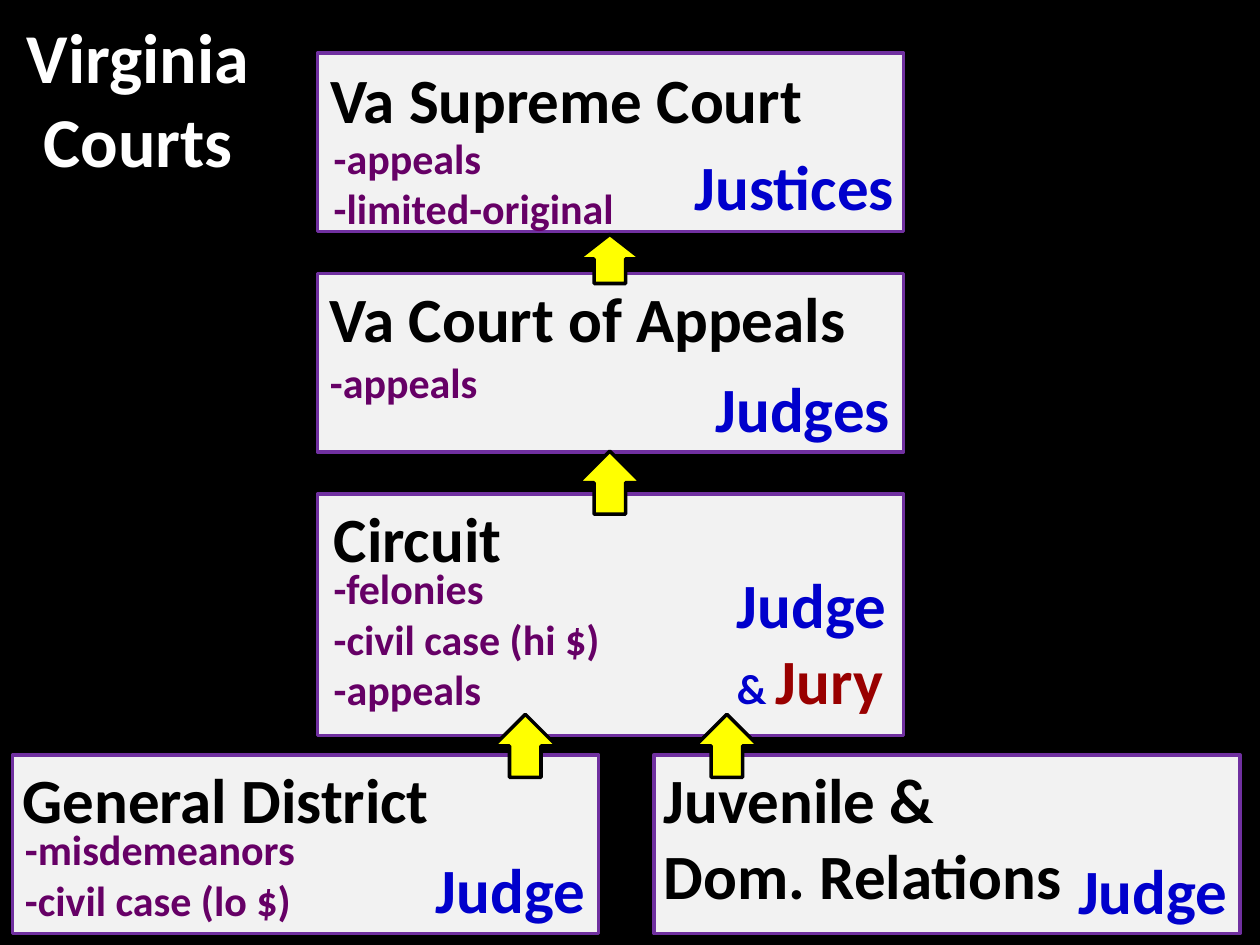
from pptx import Presentation
from pptx.dml.color import RGBColor
from pptx.enum import shapes, text
from pptx.util import Pt

BLACK = RGBColor(0x00, 0x00, 0x00)
WHITE = RGBColor(0xFF, 0xFF, 0xFF)
GREY = RGBColor(0xF2, 0xF2, 0xF2)
VIOLET = RGBColor(0x70, 0x30, 0xA0)
YELLOW = RGBColor(0xFF, 0xFF, 0x00)
BLUE = RGBColor(0x00, 0x00, 0xCC)
PLUM = RGBColor(0x66, 0x00, 0x66)
RED = RGBColor(0x99, 0x00, 0x00)

# Content: a line is a string, or a list of (text, size, colour) runs
JURY = [("& ", 24, BLUE), ("Jury", 36, RED)]
COURTS = [
    # box (left, top, height), then (lines, left, top, width) of each label
    dict(box=(181.5, 30.2, 102.2),
         name=(["Va Supreme Court"], 181.5, 31, 287),
         cases=(["-appeals", "-limited-original"], 183.6, 72, 176.5),
         bench=(["Justices"], 390, 80.6, 129.5)),
    dict(box=(181.5, 156.2, 102.2),
         name=(["Va Court of Appeals"], 181.5, 156.2, 312.5),
         cases=(["-appeals"], 181.5, 200.2, 100),
         bench=(["Judges"], 401.8, 207.4, 115)),
    dict(box=(181.5, 282.2, 138.2),
         name=(["Circuit"], 183.6, 282.2, 111.6),
         cases=(["-felonies", "-civil case (hi $)", "-appeals"],
                183.6, 318.2, 168),
         bench=(["Judge", JURY], 414, 319.7, 101.5)),
    dict(box=(7.2, 431.3, 102.2),
         name=(["General District"], 5.8, 431.3, 250),
         cases=(["-misdemeanors", "-civil case (lo $)"], 7.2, 467.3, 170.6),
         bench=(["Judge"], 242, 482.4, 101)),
    dict(box=(373.7, 431.3, 102.2),
         name=(["Juvenile &", "Dom. Relations"], 372.2, 431.3, 245),
         bench=(["Judge"], 609, 483.1, 101)),
]
STYLES = dict(name=(36, BLACK), bench=(36, BLUE), cases=(24, PLUM))
BOX_W, ARROW_W, LINE_H = 334.8, 36, 1.2
ARROWS = [(282.2, 408.2, 36), (397.4, 408.2, 36),
          (330.5, 257.8, 36), (330.5, 133.9, 28.1)]  # left, top, height

deck = Presentation()
deck.slide_width, deck.slide_height = Pt(720), Pt(540)
slide = deck.slides.add_slide(deck.slide_layouts[6])
slide.background.fill.solid()
slide.background.fill.fore_color.rgb = BLACK


def add_block(kind, left, top, width, height, fill, line):
    block = slide.shapes.add_shape(
        kind, Pt(left), Pt(top), Pt(width), Pt(height))
    block.shadow.inherit = False
    block.fill.solid()
    block.fill.fore_color.rgb = fill
    block.line.color.rgb = line
    block.line.width = Pt(2)


def add_text(lines, left, top, width, size=36, color=BLACK,
             align=text.PP_ALIGN.LEFT):
    height = 7.2 + len(lines) * size * LINE_H
    box = slide.shapes.add_textbox(Pt(left), Pt(top), Pt(width), Pt(height))
    frame = box.text_frame
    frame.word_wrap = False
    frame.auto_size = text.MSO_AUTO_SIZE.SHAPE_TO_FIT_TEXT
    for i, line in enumerate(lines):
        para = frame.add_paragraph() if i else frame.paragraphs[0]
        para.alignment = align
        runs = [(line, size, color)] if isinstance(line, str) else line
        for words, points, shade in runs:
            run = para.add_run()
            run.text = words
            run.font.name = "Calibri"
            run.font.size = Pt(points)
            run.font.bold = True
            run.font.color.rgb = shade


# Court boxes, then the arrows of appeal over them
for court in COURTS:
    left, top, height = court["box"]
    add_block(shapes.MSO_SHAPE.RECTANGLE, left, top, BOX_W, height,
              GREY, VIOLET)
for left, top, height in ARROWS:
    add_block(shapes.MSO_SHAPE.UP_ARROW, left, top, ARROW_W, height,
              YELLOW, BLACK)

# Labels of each court
for part, (size, color) in STYLES.items():
    for court in COURTS:
        if part in court:
            add_text(*court[part], size=size, color=color)

# Slide title
add_text(["Virginia", "Courts"], 7.2, 4.3, 143.3, size=40, color=WHITE,
         align=text.PP_ALIGN.CENTER)

deck.save("out.pptx")
